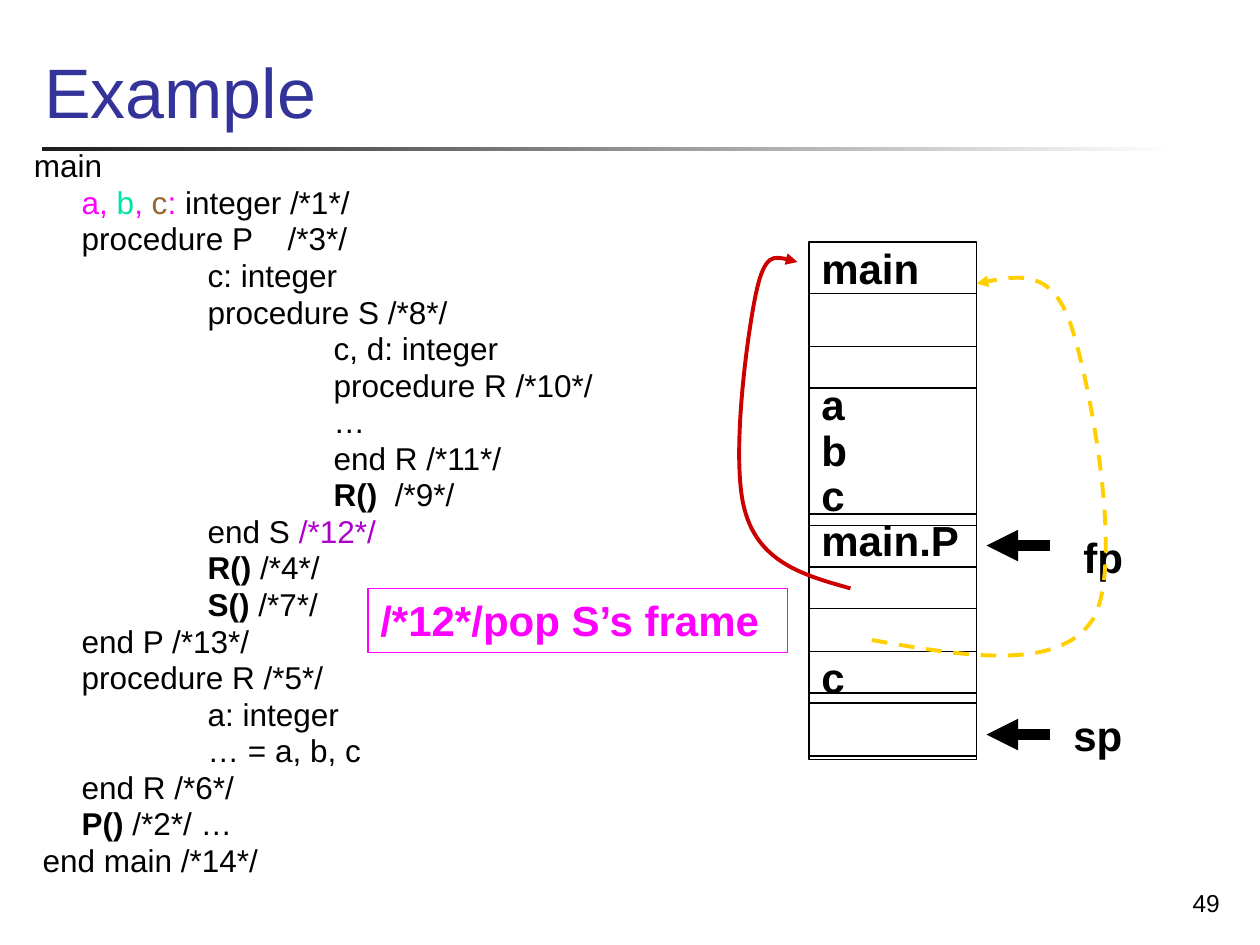
from pptx import Presentation
from pptx.dml.color import RGBColor
from pptx.enum.dml import MSO_LINE
from pptx.enum.shapes import MSO_CONNECTOR, MSO_SHAPE
from pptx.enum.text import MSO_ANCHOR as Anchor, PP_ALIGN as Align
from pptx.oxml.ns import qn
from pptx.util import Inches, Pt
from lxml.etree import SubElement

BLACK = RGBColor(0x00, 0x00, 0x00)
WHITE = RGBColor(0xFF, 0xFF, 0xFF)
CHARCOAL = RGBColor(0x1C, 0x1C, 0x1C)
NAVY = RGBColor(0x33, 0x33, 0x99)
MAGENTA = RGBColor(0xFF, 0x00, 0xFF)
GREEN = RGBColor(0x00, 0xE4, 0xA8)
BROWN = RGBColor(0x99, 0x66, 0x33)
PURPLE = RGBColor(0xAC, 0x00, 0xC8)
RED = RGBColor(0xCC, 0x00, 0x00)
YELLOW = RGBColor(0xFF, 0xCF, 0x01)

CODE = [
    (0, ["main"]),
    (1, [("a,", MAGENTA), (" b", GREEN), (",", MAGENTA), (" c", BROWN),
         (": ", MAGENTA), "integer /*1*/"]),
    (1, ["procedure P    /*3*/"]),
    (2, ["c: integer"]),
    (2, ["procedure S /*8*/"]),
    (3, ["c, d: integer"]),
    (3, ["procedure R /*10*/"]),
    (3, ["…"]),
    (3, ["end R /*11*/"]),
    (3, [("R()", BLACK, True), "  /*9*/"]),
    (2, ["end S ", ("/*12*/", PURPLE)]),
    (2, [("R()", BLACK, True), " /*4*/"]),
    (2, [("S()", BLACK, True), " /*7*/"]),
    (1, ["end P /*13*/"]),
    (1, ["procedure R /*5*/"]),
    (2, ["a: integer"]),
    (2, ["… = a, b, c"]),
    (1, ["end R /*6*/"]),
    (1, [("P()", BLACK, True), " /*2*/ …"]),
    (0, [" end main /*14*/"]),
]
STACK = [("main", 0), ("a", 2), ("b", 0), ("c", 0), ("main.P", 0), ("c", 2)]
STACK_LEFT, STACK_TOP, STACK_WIDTH, STACK_HEIGHT = 6.42, 1.92, 1.33, 4.11
SLOT_EDGES = [2.33, 2.75, 3.08, 4.08, 4.17, 4.5, 4.83, 5.17, 5.5, 5.58, 6]
STATIC_LINK = [(6.75, 4.67), (6.39, 4.57), (6.04, 4.47), (5.92, 4.08),
               (5.79, 3.69), (5.93, 2.66), (6, 2.33),
               (6.07, 2), (6.2, 2.04), (6.33, 2.08)]
DYNAMIC_LINK = [(6.92, 5.08), (7.66, 5.21), (8.4, 5.33), (8.67, 4.92),
                (8.93, 4.5), (8.65, 3.03), (8.5, 2.58),
                (8.35, 2.14), (8.05, 2.19), (7.75, 2.25)]


class StackSlide:
    """Holds the text style and the slide, and draws each kind of element."""

    font = "Arial"
    stack_line_pitch = 26

    def __init__(self, deck):
        self.slide = deck.slides.add_slide(deck.slide_layouts[5])
        self.shapes = self.slide.shapes

    def format_run(self, run, size, color=BLACK, bold=False):
        run.font.name = self.font
        run.font.size = Pt(size)
        run.font.bold = bold
        run.font.color.rgb = color

    def title(self, text, left, top, width, height):
        heading = self.shapes.title
        heading.left, heading.top = Inches(left), Inches(top)
        heading.width, heading.height = Inches(width), Inches(height)
        frame = heading.text_frame
        frame.text = text
        frame.vertical_anchor = Anchor.BOTTOM
        frame.paragraphs[0].alignment = Align.LEFT
        self.format_run(frame.paragraphs[0].runs[0], 40, NAVY)

    def label(self, text, left, top, width, height, size=24, bold=True,
              align=Align.LEFT, anchor=Anchor.TOP):
        box = self.shapes.add_textbox(*map(Inches, (left, top, width, height)))
        frame = box.text_frame
        frame.text = text
        frame.word_wrap = False
        frame.vertical_anchor = anchor
        frame.paragraphs[0].alignment = align
        self.format_run(frame.paragraphs[0].runs[0], size, bold=bold)

    def rectangle(self, left, top, width, height, outline=None):
        box = self.shapes.add_shape(
            MSO_SHAPE.RECTANGLE, *map(Inches, (left, top, width, height)))
        box.shadow.inherit = False
        box.fill.background()
        if outline is None:
            box.line.fill.background()
        else:
            box.line.color.rgb = outline
            box.line.width = Pt(0.75)
        box.text_frame.vertical_anchor = Anchor.TOP
        return box

    def rule(self, left, top, width, height):
        bar = self.rectangle(left, top, width, height)
        bar.fill.gradient()
        bar.fill.gradient_angle = 0
        for stop, position, color in zip(bar.fill.gradient_stops, (0, 1), (CHARCOAL, WHITE)):
            stop.position = position
            stop.color.rgb = color

    def note(self, text, left, top, width, height, color):
        frame = self.rectangle(left, top, width, height, color).text_frame
        frame.text = text
        frame.word_wrap = False
        frame.paragraphs[0].alignment = Align.LEFT
        self.format_run(frame.paragraphs[0].runs[0], 24, color, True)

    def stack(self, entries, left, top, width, height):
        frame = self.rectangle(left, top, width, height, BLACK).text_frame
        frame.text = "\n".join(name for name, _ in entries)
        for entry, (_, empty_slots) in zip(frame.paragraphs, entries):
            entry.alignment = Align.LEFT
            entry.line_spacing = 0.9
            entry.space_before = Pt(empty_slots * self.stack_line_pitch)
            self.format_run(entry.runs[0], 24, bold=True)

    def code(self, lines, left, top, width, height):
        frame = self.shapes.add_textbox(
            *map(Inches, (left, top, width, height))).text_frame
        frame.word_wrap = True
        for number, (level, parts) in enumerate(lines):
            statement = frame.add_paragraph() if number else frame.paragraphs[0]
            statement.line_spacing = 0.8
            statement.space_before = Pt(3.6)
            indent = Inches(level - 0.62) if level else 0
            statement._p.get_or_add_pPr().set("marL", str(indent))
            for part in parts:
                text, *look = (part,) if isinstance(part, str) else part
                run = statement.add_run()
                run.text = text
                self.format_run(run, 18, *look)

    def arrowhead(self, line):
        SubElement(line._get_or_add_ln(), qn("a:tailEnd"), type="triangle")

    def line(self, start, end, width=0.75, arrow=False):
        stroke = self.shapes.add_connector(
            MSO_CONNECTOR.STRAIGHT, *map(Inches, start + end))
        stroke.line.color.rgb = BLACK
        stroke.line.width = Pt(width)
        if arrow:
            self.arrowhead(stroke.line)
        SubElement(stroke._element.spPr, qn("a:effectLst"))

    def curve(self, points, color, dash=None):
        start, *controls = [(Inches(x), Inches(y)) for x, y in points]
        builder = self.shapes.build_freeform(*start)
        builder.add_line_segments(controls, close=False)
        link = builder.convert_to_shape()
        link.shadow.inherit = False
        link.fill.background()
        link.line.color.rgb = color
        link.line.width = Pt(2.25)
        if dash:
            link.line.dash_style = dash
        self.arrowhead(link.line)
        outline = next(link._element.iter(qn("a:path")))
        segments = outline.findall(qn("a:lnTo"))
        for first in range(0, len(segments), 3):
            bezier = SubElement(outline, qn("a:cubicBezTo"))
            for segment in segments[first:first + 3]:
                bezier.append(segment[0])
                outline.remove(segment)


def main():
    deck = Presentation()
    deck.slide_width, deck.slide_height = Inches(10), Inches(7.5)
    page = StackSlide(deck)
    page.rule(0.33, 1.17, 9, 0.03)
    page.label("49", 7.7, 6.83, 2.08, 0.5, 14, False, Align.RIGHT, Anchor.BOTTOM)
    page.title("Example", 0.25, 0, 9.52, 1.1)
    page.stack(STACK, STACK_LEFT, STACK_TOP, STACK_WIDTH, STACK_HEIGHT)
    for pointer, left, top, width, arrow_y in (
            ("fp", 8.5, 4.17, 0.52, 4.33), ("sp", 8.42, 5.58, 0.6, 5.83)):
        page.label(pointer, left, top, width, 0.51)
        page.line((8.33, arrow_y), (7.83, arrow_y), 6, arrow=True)
    for edge in SLOT_EDGES:
        page.line((STACK_LEFT, edge), (STACK_LEFT + STACK_WIDTH, edge))
    page.curve(STATIC_LINK, RED)
    page.curve(DYNAMIC_LINK, YELLOW, MSO_LINE.DASH)
    page.note("/*12*/pop S’s frame", 2.92, 4.67, 3.33, 0.51, MAGENTA)
    page.code(CODE, 0.17, 1.17, 4.75, 5.08)
    deck.save("out.pptx")


if __name__ == "__main__":
    main()
